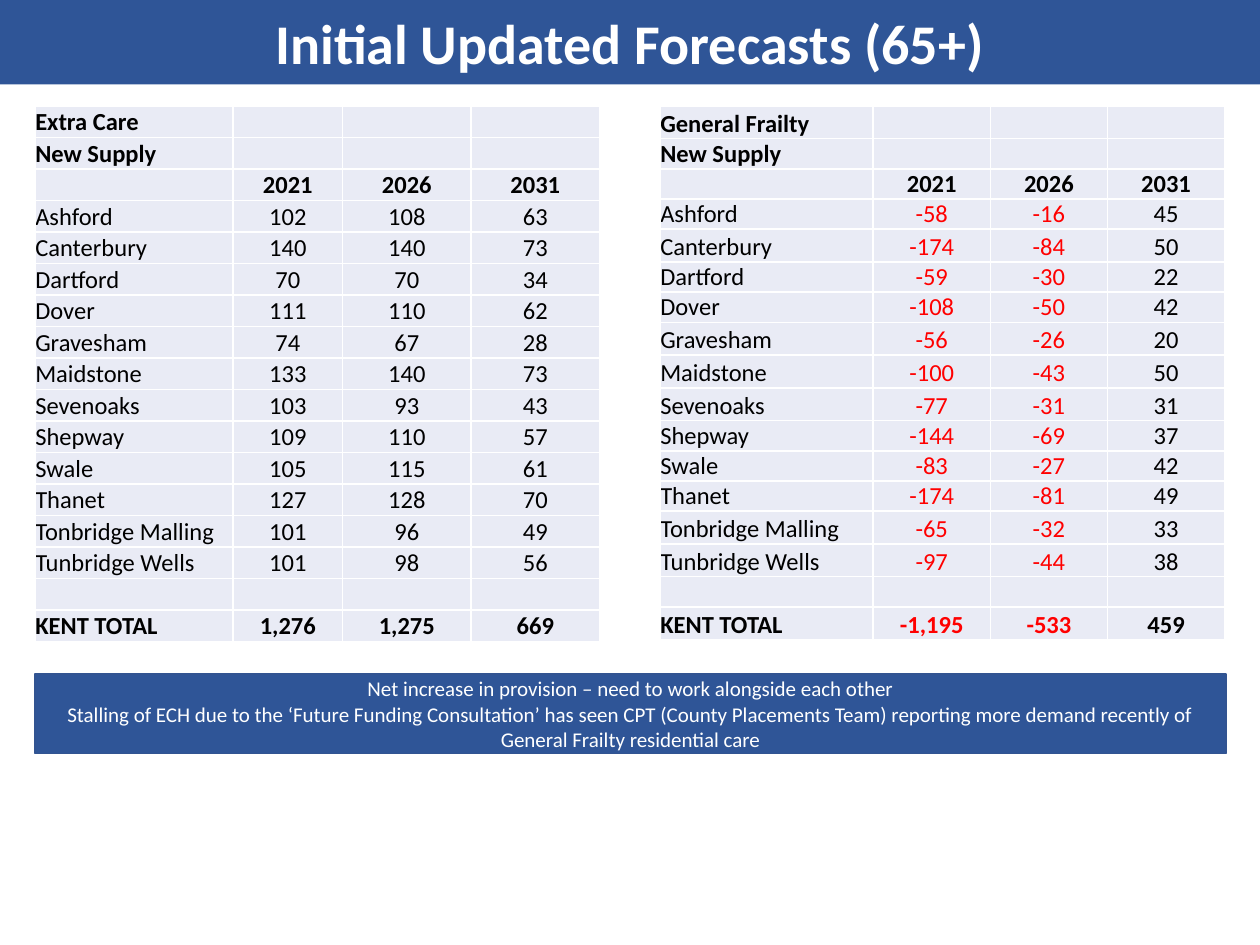
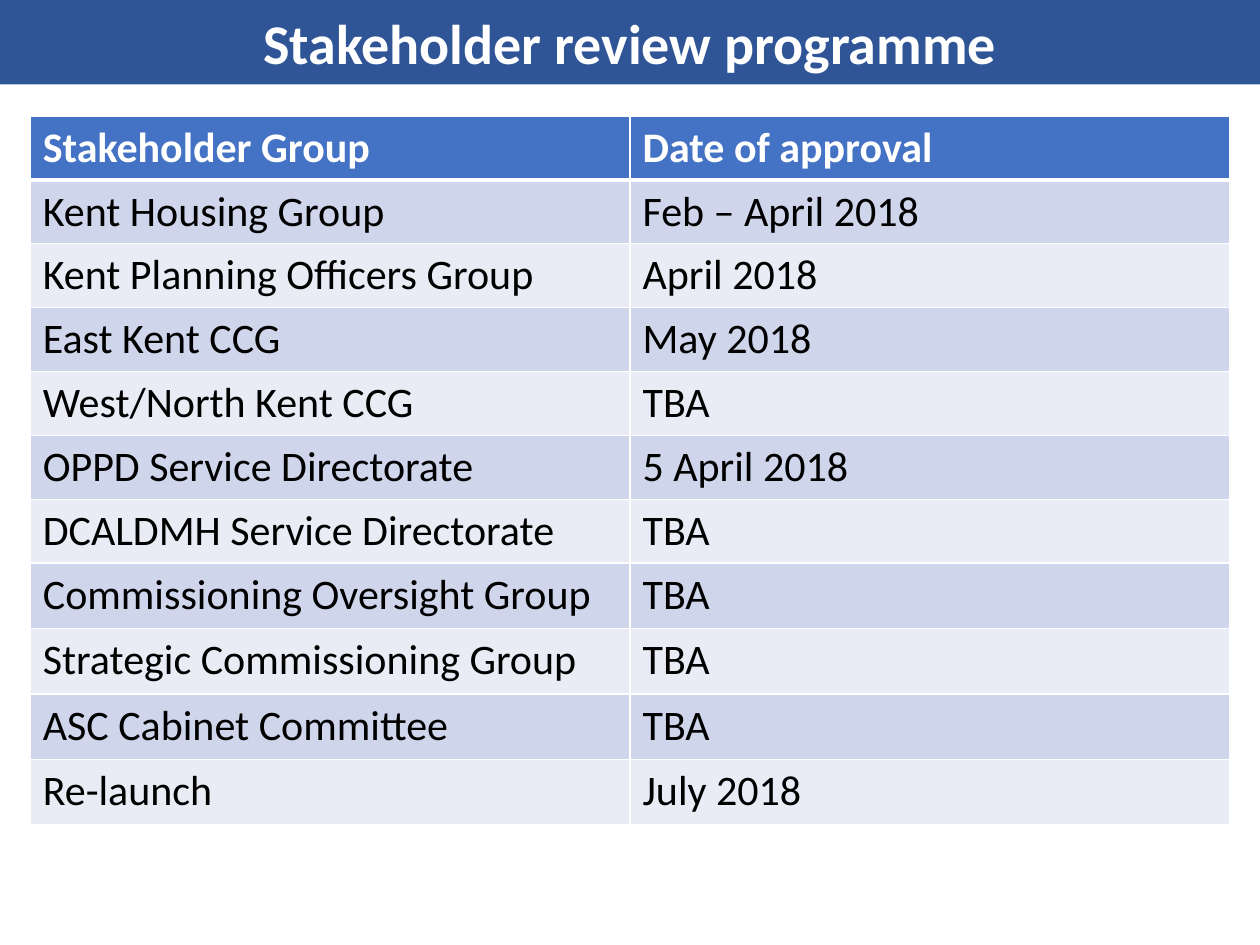
import dataclasses
import pptx
import pptx.dml.color
import pptx.enum.shapes
import pptx.enum.text
import pptx.util
from lxml import etree
from pptx.oxml.ns import qn

FORECAST_TITLE = "Initial Updated Forecasts (65+)"
YEARS = ("2021", "2026", "2031")
DISTRICTS = (
    "Ashford", "Canterbury", "Dartford", "Dover", "Gravesham", "Maidstone",
    "Sevenoaks", "Shepway", "Swale", "Thanet", "Tonbridge Malling", "Tunbridge Wells",
)
EXTRA_CARE = {
    "heading": "Extra Care",
    "supply": (
        (102, 108, 63), (140, 140, 73), (70, 70, 34), (111, 110, 62),
        (74, 67, 28), (133, 140, 73), (103, 93, 43), (109, 110, 57),
        (105, 115, 61), (127, 128, 70), (101, 96, 49), (101, 98, 56),
    ),
    "total": (1276, 1275, 669),
    "left": 0.28,
    "columns": (1.57, 0.87, 1.02, 1.02),
    "rows": (0.25,) * 17,
}
GENERAL_FRAILTY = {
    "heading": "General Frailty",
    "supply": (
        (-58, -16, 45), (-174, -84, 50), (-59, -30, 22), (-108, -50, 42),
        (-56, -26, 20), (-100, -43, 50), (-77, -31, 31), (-144, -69, 37),
        (-83, -27, 42), (-174, -81, 49), (-65, -32, 33), (-97, -44, 38),
    ),
    "total": (-1195, -533, 459),
    "left": 5.24,
    "columns": (1.69, 0.93, 0.93, 0.93),
    "rows": (0.26, 0.24, 0.24, 0.24, 0.26, 0.24, 0.24, 0.26, 0.26,
             0.26, 0.24, 0.24, 0.24, 0.26, 0.26, 0.24, 0.26),
}
PROVISION_NOTE = (
    "Net increase in provision – need to work alongside each other",
    "Stalling of ECH due to the ‘Future Funding Consultation’ has seen CPT (County Placements Team) "
    "reporting more demand recently of General Frailty residential care",
)
REVIEW_TITLE = "Stakeholder review programme"
REVIEW_PROGRAMME = (
    ("Stakeholder Group", "Date of approval"),
    ("Kent Housing Group", "Feb – April 2018"),
    ("Kent Planning Officers Group", "April 2018"),
    ("East Kent CCG", "May 2018"),
    ("West/North Kent CCG", "TBA"),
    ("OPPD Service Directorate", "5 April 2018"),
    ("DCALDMH Service Directorate", "TBA"),
    ("Commissioning Oversight Group", "TBA"),
    ("Strategic Commissioning Group", "TBA"),
    ("ASC Cabinet Committee", "TBA"),
    ("Re-launch", "July 2018"),
)


@dataclasses.dataclass(frozen=True)
class Theme:
    font: str = "Calibri"
    band: str = "2F5597"
    band_line: str = "325491"
    header: str = "4472C4"
    dark_row: str = "CFD5EA"
    light_row: str = "E9EBF5"
    white: str = "FFFFFF"
    black: str = "000000"
    shortfall: str = "FF0000"
    title_size: int = 32
    review_size: int = 24
    forecast_size: int = 14
    note_size: int = 12


THEME = Theme()
WIDTH, HEIGHT = 10, 7.5
BAND_HEIGHT = 0.67
CENTER = pptx.enum.text.PP_ALIGN.CENTER
LEFT = pptx.enum.text.PP_ALIGN.LEFT
MIDDLE = pptx.enum.text.MSO_ANCHOR.MIDDLE


def inches(*lengths):
    return [pptx.util.Inches(length) for length in lengths]


def rgb(color):
    return pptx.dml.color.RGBColor.from_string(color)


def paint(part, color):
    part.fill.solid()
    part.fill.fore_color.rgb = rgb(color)


def write(paragraph, text, size, color, bold=False, align=LEFT):
    paragraph.alignment = align
    if not text:
        etree.SubElement(paragraph._p, qn("a:endParaRPr"), sz=str(size * 100))
        return
    run = paragraph.add_run()
    run.text = text
    run.font.name = THEME.font
    run.font.size = pptx.util.Pt(size)
    run.font.bold = bold
    run.font.color.rgb = rgb(color)


def border(cell, top=1, bottom=1):
    widths = {"lnL": 1, "lnR": 1, "lnT": top, "lnB": bottom}
    properties = cell._tc.get_or_add_tcPr()
    for position, (side, width) in enumerate(widths.items()):
        line = etree.Element(qn(f"a:{side}"), w=str(pptx.util.Pt(width)))
        fill = etree.SubElement(line, qn("a:solidFill"))
        etree.SubElement(fill, qn("a:srgbClr"), val=THEME.white)
        properties.insert(position, line)


def add_titled_slide(deck, title):
    slide = deck.slides.add_slide(deck.slide_layouts[5])
    band = slide.shapes.title
    band.left, band.top, band.width, band.height = inches(0, 0, WIDTH, BAND_HEIGHT)
    paint(band, THEME.band)
    frame = band.text_frame
    frame.auto_size = pptx.enum.text.MSO_AUTO_SIZE.NONE
    frame.vertical_anchor = MIDDLE
    write(frame.paragraphs[0], title, THEME.title_size, THEME.white, True, CENTER)
    return slide


def add_grid(slide, left, top, columns, rows):
    box = inches(left, top, sum(columns), sum(rows))
    grid = slide.shapes.add_table(len(rows), len(columns), *box).table
    grid.horz_banding = False
    for column, width in zip(grid.columns, inches(*columns)):
        column.width = width
    for row, height in zip(grid.rows, inches(*rows)):
        row.height = height
    return grid


def forecast_rows(forecast):
    def numbers(values):
        return tuple(f"{value:,}" for value in values)

    blank = ("",) * len(YEARS)
    return [
        (forecast["heading"], *blank),
        ("New Supply", *blank),
        ("", *YEARS),
        *((name, *numbers(values)) for name, values in zip(DISTRICTS, forecast["supply"])),
        ("", *blank),
        ("KENT TOTAL", *numbers(forecast["total"])),
    ]


def add_forecast(slide, forecast):
    lines = forecast_rows(forecast)
    grid = add_grid(slide, forecast["left"], 0.84, forecast["columns"], forecast["rows"])
    for r, line in enumerate(lines):
        bold = r < 3 or r == len(lines) - 1
        for c, text in enumerate(line):
            cell = grid.cell(r, c)
            cell.margin_left = cell.margin_right = cell.margin_top = cell.margin_bottom = 0
            cell.vertical_anchor = pptx.enum.text.MSO_ANCHOR.BOTTOM
            paint(cell, THEME.light_row)
            border(cell)
            color = THEME.shortfall if text.startswith("-") else THEME.black
            write(cell.text_frame.paragraphs[0], text, THEME.forecast_size, color, bold,
                  CENTER if c else LEFT)


def add_provision_note(slide):
    note = slide.shapes.add_shape(
        pptx.enum.shapes.MSO_SHAPE.RECTANGLE, *inches(0.28, 5.35, 9.45, 0.63))
    note.shadow.inherit = False
    paint(note, THEME.band)
    note.line.color.rgb = rgb(THEME.band_line)
    note.line.width = pptx.util.Pt(1)
    frame = note.text_frame
    frame.word_wrap = True
    frame.vertical_anchor = MIDDLE
    for i, text in enumerate(PROVISION_NOTE):
        paragraph = frame.add_paragraph() if i else frame.paragraphs[0]
        write(paragraph, text, THEME.note_size, THEME.white, align=CENTER)


def add_review(slide):
    grid = add_grid(slide, 0.24, 0.92, (4.76,) * 2, (0.5,) * 7 + (0.52,) * 4)
    for r, line in enumerate(REVIEW_PROGRAMME):
        heading = r == 0
        fill = THEME.header if heading else (THEME.light_row, THEME.dark_row)[r % 2]
        for c, text in enumerate(line):
            cell = grid.cell(r, c)
            paint(cell, fill)
            border(cell, top=3 if r == 1 else 1, bottom=3 if heading else 1)
            write(cell.text_frame.paragraphs[0], text, THEME.review_size,
                  THEME.white if heading else THEME.black, heading)


def main():
    deck = pptx.Presentation()
    deck.slide_width, deck.slide_height = inches(WIDTH, HEIGHT)
    forecasts = add_titled_slide(deck, FORECAST_TITLE)
    for forecast in (EXTRA_CARE, GENERAL_FRAILTY):
        add_forecast(forecasts, forecast)
    add_provision_note(forecasts)
    add_review(add_titled_slide(deck, REVIEW_TITLE))
    deck.save("out.pptx")


if __name__ == "__main__":
    main()
